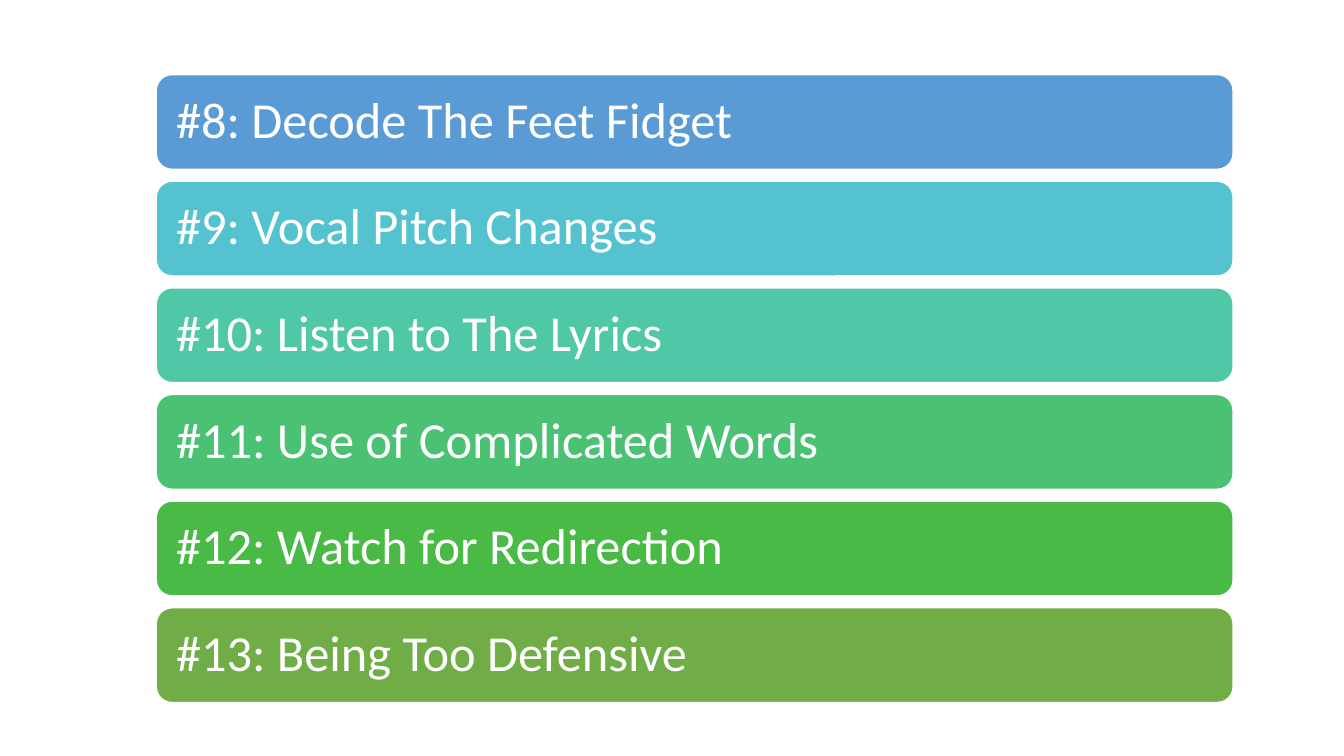
from pptx import Presentation
from pptx.dml.color import RGBColor
from pptx.enum.shapes import MSO_SHAPE
from pptx.enum.text import MSO_ANCHOR, PP_ALIGN
from pptx.util import Inches, Pt

WHITE = RGBColor(0xFF, 0xFF, 0xFF)
BLUE = RGBColor(0x5B, 0x9B, 0xD5)
CYAN = RGBColor(0x55, 0xC3, 0xCF)
TEAL = RGBColor(0x50, 0xC8, 0xA7)
MINT = RGBColor(0x4B, 0xC1, 0x74)
GREEN = RGBColor(0x4A, 0xBA, 0x46)
OLIVE = RGBColor(0x70, 0xAD, 0x47)

LEFT, WIDTH, HEIGHT = 1.55, 10.68, 0.94
FIRST_TOP, LAST_TOP = 0.74, 6.03

TIPS = [
    ("#8: Decode The Feet Fidget", BLUE),
    ("#9: Vocal Pitch Changes", CYAN),
    ("#10: Listen to The Lyrics", TEAL),
    ("#11: Use of Complicated Words", MINT),
    ("#12: Watch for Redirection", GREEN),
    ("#13: Being Too Defensive", OLIVE),
]


class SlideBuilder:
    font = "Calibri"
    size = Pt(36)
    inset = Inches(0.15)

    def __init__(self, slide):
        self.slide = slide

    def bar(self, text, color, left, top, width, height):
        sp = self.slide.shapes.add_shape(
            MSO_SHAPE.ROUNDED_RECTANGLE,
            Inches(left), Inches(top), Inches(width), Inches(height))
        sp.shadow.inherit = False
        sp.fill.solid()
        sp.fill.fore_color.rgb = color
        sp.line.color.rgb = WHITE
        sp.line.width = Pt(1)
        tf = sp.text_frame
        tf.word_wrap = True
        tf.vertical_anchor = MSO_ANCHOR.MIDDLE
        tf.margin_left = tf.margin_right = self.inset
        tf.margin_top = tf.margin_bottom = self.inset
        p = tf.paragraphs[0]
        p.text = text
        p.alignment = PP_ALIGN.LEFT
        p.line_spacing = 0.9
        p.font.name = self.font
        p.font.size = self.size
        p.font.color.rgb = WHITE


def main():
    prs = Presentation()
    prs.slide_width = Inches(13.33)
    prs.slide_height = Inches(7.5)
    builder = SlideBuilder(prs.slides.add_slide(prs.slide_layouts[6]))
    pitch = (LAST_TOP - FIRST_TOP) / (len(TIPS) - 1)
    for i, (text, color) in enumerate(TIPS):
        builder.bar(text, color, LEFT, FIRST_TOP + i * pitch, WIDTH, HEIGHT)
    prs.save("out.pptx")


if __name__ == "__main__":
    main()
